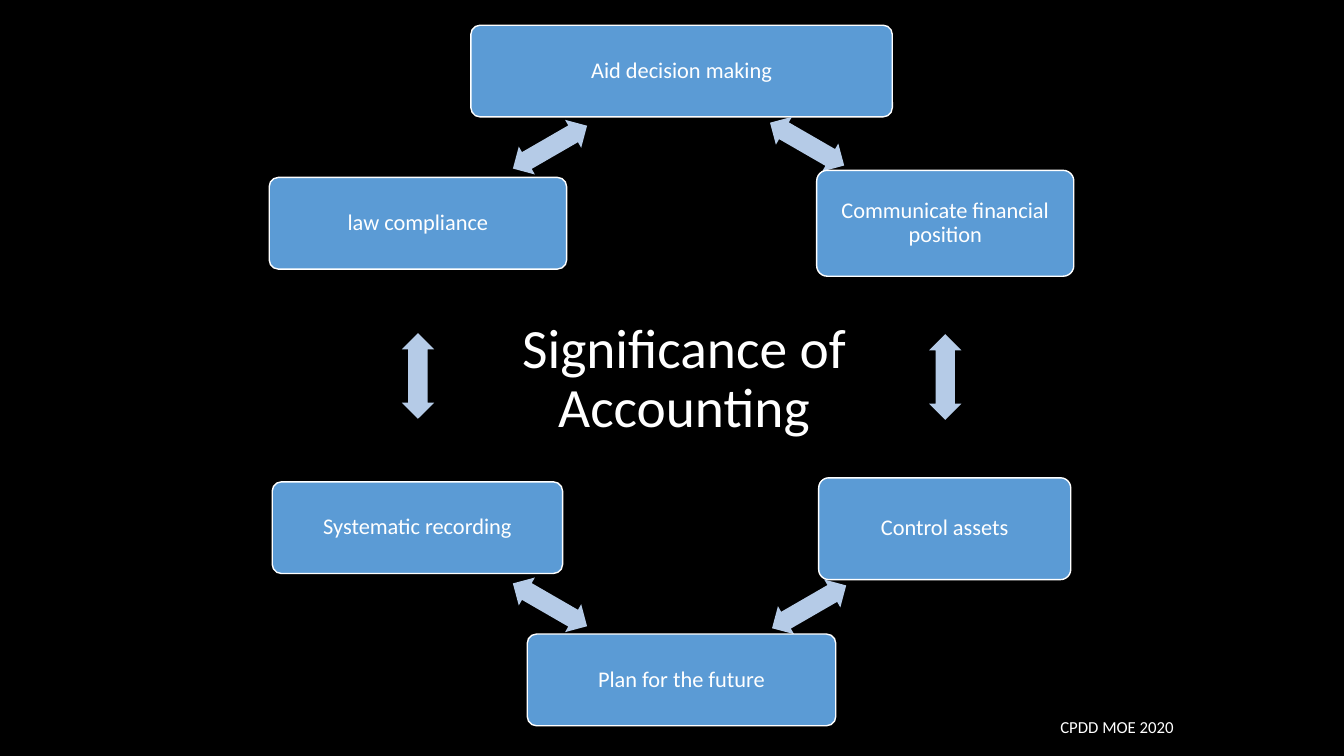
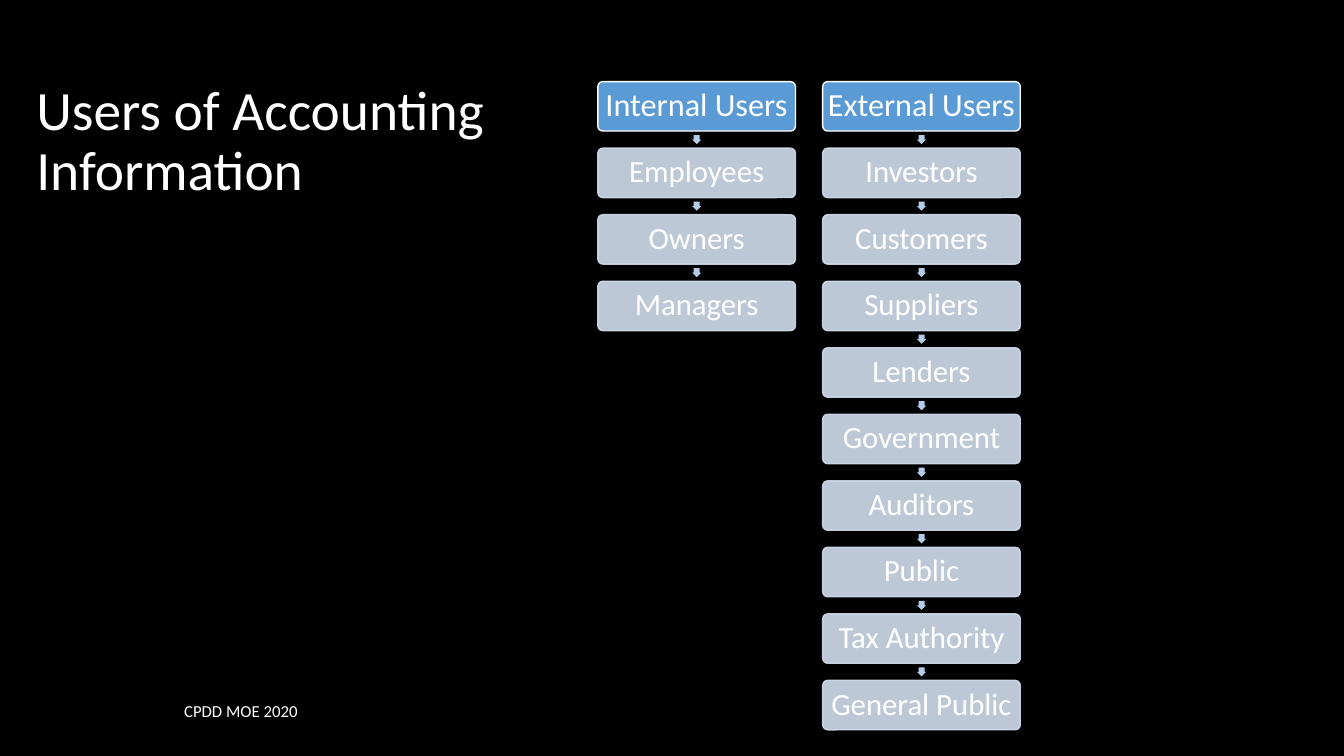
from pptx import Presentation
from pptx.dml.color import RGBColor
from pptx.enum.shapes import MSO_SHAPE
from pptx.enum.text import MSO_ANCHOR, MSO_AUTO_SIZE, PP_ALIGN
from pptx.oxml.ns import qn
from pptx.util import Inches, Pt
from lxml.etree import SubElement


def rgb(value):
    return RGBColor.from_string(value)


def write(frame, text, size=16, font="Calibri", color="FFFFFF",
          align=PP_ALIGN.CENTER, spacing=None, inset=None):
    frame.word_wrap = True
    frame.auto_size = MSO_AUTO_SIZE.NONE
    frame.vertical_anchor = MSO_ANCHOR.MIDDLE
    if inset is not None:
        frame.margin_left = frame.margin_right = Inches(inset)
        frame.margin_top = frame.margin_bottom = Inches(inset)
    paragraph = frame.paragraphs[0]
    paragraph.alignment = align
    if spacing:
        paragraph.line_spacing = spacing
    run = paragraph.add_run()
    run.text = text
    run.font.size = Pt(size)
    run.font.name = font
    run.font.color.rgb = rgb(color)


class Deck:
    BACKGROUND = "000000"
    BLUE = "5B9BD5"
    PALE = "D2DEEF"
    ARROW = "B5CBE7"
    WHITE = "FFFFFF"

    def __init__(self):
        self.presentation = Presentation()
        self.presentation.slide_width = Inches(13.33)
        self.presentation.slide_height = Inches(7.5)
        backdrop = self.presentation.slide_master.background.fill
        backdrop.solid()
        backdrop.fore_color.rgb = rgb(self.BACKGROUND)
        self.slide = None

    def start_slide(self, heading, left, top, width, align):
        layout = self.presentation.slide_layouts[5]
        self.slide = self.presentation.slides.add_slide(layout)
        title = self.slide.shapes.title
        title.left, title.top = Inches(left), Inches(top)
        title.width, title.height = Inches(width), Inches(1.18)
        write(title.text_frame, heading, size=39.6, align=align, spacing=0.9)

    def figure(self, kind, left, top, width, height, fill, adjustments):
        shape = self.slide.shapes.add_shape(
            kind, Inches(left), Inches(top), Inches(width), Inches(height))
        shape.shadow.inherit = False
        shape.fill.solid()
        shape.fill.fore_color.rgb = rgb(fill)
        shape.line.fill.background()
        for index, adjustment in enumerate(adjustments):
            shape.adjustments[index] = adjustment
        return shape

    def box(self, text, left, top, width, height, size=16, inset=0.08, pale=False):
        fill = self.PALE if pale else self.BLUE
        shape = self.figure(MSO_SHAPE.ROUNDED_RECTANGLE, left, top, width, height,
                            fill, [0.1])
        shape.line.color.rgb = rgb(self.PALE if pale else self.WHITE)
        shape.line.width = Pt(1)
        if pale:
            for color in shape._element.spPr.iter(qn("a:srgbClr")):
                SubElement(color, qn("a:alpha")).set("val", "90000")
        write(shape.text_frame, text, size=size, spacing=0.9, inset=inset)

    def double_arrow(self, left, top, angle):
        arrow = self.figure(MSO_SHAPE.LEFT_RIGHT_ARROW, left, top, 0.85, 0.32,
                            self.ARROW, [0.6, 0.5])
        arrow.rotation = angle

    def step_arrow(self, center, top):
        side = 0.09
        self.figure(MSO_SHAPE.DOWN_ARROW, center - side / 2, top, side, side,
                    self.ARROW, [0.667, 0.5])

    def footer(self, left, top):
        label = self.slide.shapes.add_textbox(
            Inches(left), Inches(top), Inches(4.5), Inches(0.4))
        write(label.text_frame, "CPDD MOE 2020", size=12)

    def user_column(self, left, names):
        width, height, first_top, pitch = 1.96, 0.49, 0.81, 0.66
        for row, name in enumerate(names):
            top = first_top + row * pitch
            if row:
                self.step_arrow(left + width / 2, top - 0.13)
            self.box(name, left, top, width, height, size=22 if row else 23,
                     inset=0.01, pale=row > 0)


def significance_slide(deck):
    deck.start_slide("Significance of Accounting", 4.73, 3.18, 4.11, PP_ALIGN.CENTER)
    purposes = [
        ("Aid decision making", 4.67, 0.25, 4.18, 0.91),
        ("Communicate financial position", 8.1, 1.69, 2.55, 1.05),
        ("Control assets", 8.12, 4.74, 2.5, 1.01),
        ("Plan for the future", 5.23, 6.29, 3.06, 0.91),
        ("Systematic recording", 2.7, 4.78, 2.88, 0.91),
        ("law compliance", 2.67, 1.76, 2.95, 0.91),
    ]
    arrow_corners = [(7.58, 1.27), (8.95, 3.58), (7.6, 5.86),
                     (5.03, 5.84), (3.72, 3.57), (5.03, 1.3)]
    for position, (purpose, corner) in enumerate(zip(purposes, arrow_corners)):
        deck.box(*purpose)
        deck.double_arrow(*corner, angle=30 + 60 * position)
    deck.footer(8.83, 7.01)


def users_slide(deck):
    deck.start_slide("Users of Accounting Information", 0.26, 0.82, 5.33, PP_ALIGN.LEFT)
    deck.user_column(5.93, ["Internal Users", "Employees", "Owners", "Managers"])
    deck.user_column(8.16, ["External Users", "Investors", "Customers", "Suppliers",
                            "Lenders", "Government", "Auditors", "Public",
                            "Tax Authority", "General Public"])
    deck.footer(0.14, 6.85)


def main():
    deck = Deck()
    significance_slide(deck)
    users_slide(deck)
    deck.presentation.save("out.pptx")


if __name__ == "__main__":
    main()
